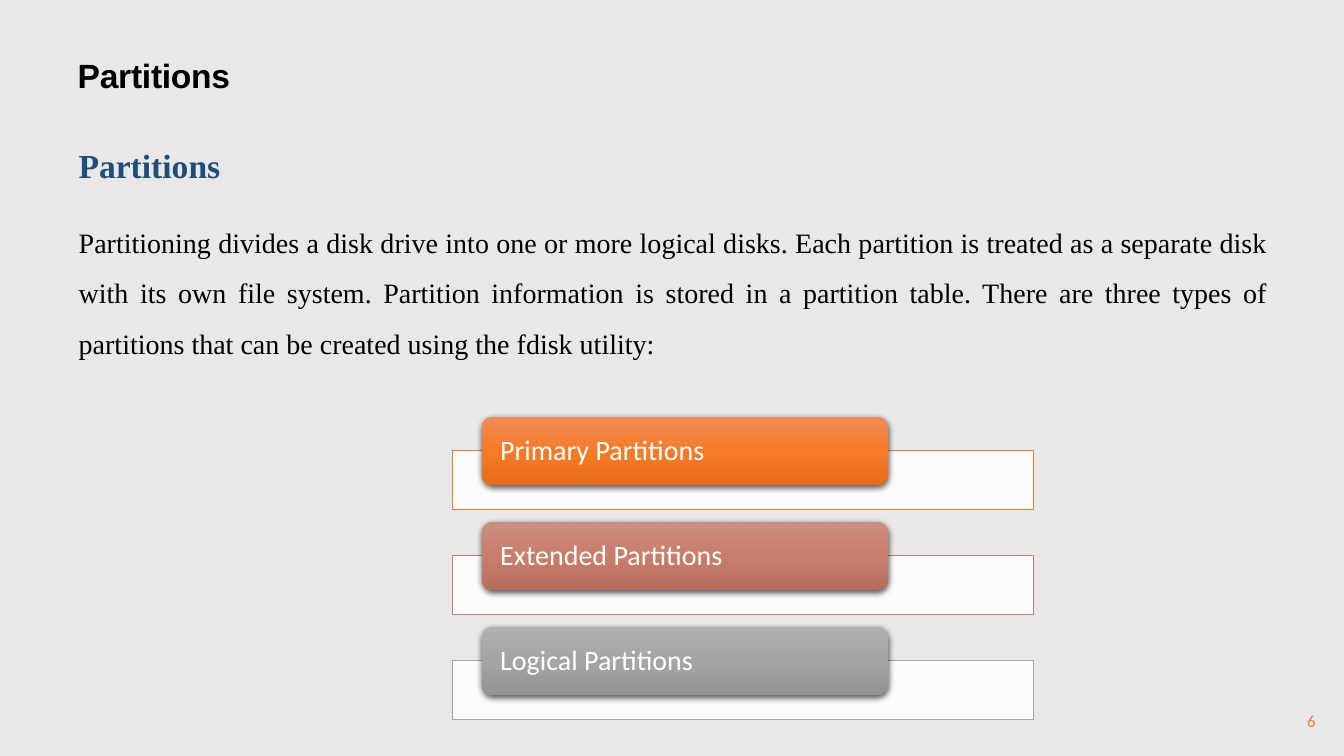
from copy import deepcopy

from lxml.etree import SubElement
from pptx import Presentation
from pptx.dml.color import RGBColor
from pptx.enum.shapes import MSO_SHAPE
from pptx.enum.text import MSO_ANCHOR, MSO_AUTO_SIZE, PP_ALIGN
from pptx.oxml.ns import qn
from pptx.util import Pt


def color(hex_string):
    return RGBColor.from_string(hex_string)


class SlideBuilder:
    heading_font = "Arial"
    text_font = "Times New Roman"
    label_font = "Calibri"
    black = "000000"
    white = "FFFFFF"
    navy = "1F4E79"
    orange = "ED7D31"
    background = "E9E7E7"

    def __init__(self, presentation):
        self.slide = presentation.slides.add_slide(presentation.slide_layouts[1])
        self.slide.background.fill.solid()
        self.slide.background.fill.fore_color.rgb = color(self.background)

    def place(self, shape, left, top, width, height):
        shape.left, shape.top = Pt(left), Pt(top)
        shape.width, shape.height = Pt(width), Pt(height)

    def set_text(self, shape, text, size, font, hex_string, bold=False,
                 align=PP_ALIGN.LEFT, anchor=MSO_ANCHOR.TOP, line_spacing=1.0):
        frame = shape.text_frame
        frame.word_wrap = True
        frame.auto_size = MSO_AUTO_SIZE.NONE
        frame.vertical_anchor = anchor
        paragraph = frame.paragraphs[0]
        paragraph.alignment = align
        paragraph.line_spacing = line_spacing
        paragraph.space_before = Pt(0)
        run = paragraph.add_run()
        run.text = text
        run.font.size = Pt(size)
        run.font.name = font
        run.font.bold = bold
        run.font.color.rgb = color(hex_string)
        return paragraph

    def title(self, text, box):
        shape = self.slide.shapes.title
        self.place(shape, *box)
        paragraph = self.set_text(shape, text, 24, self.heading_font, self.black, bold=True)
        paragraph.runs[0].font._element.set("spc", "-20")

    def body(self, text, box):
        shape = self.slide.placeholders[1]
        self.place(shape, *box)
        paragraph = self.set_text(shape, text, 20, self.text_font, self.black,
                                  align=PP_ALIGN.JUSTIFY, line_spacing=1.5)
        properties = paragraph._p.get_or_add_pPr()
        properties.set("marL", "0")
        properties.set("indent", "0")
        SubElement(properties, qn("a:buNone"))

    def text_box(self, text, box, size, font, hex_string, **style):
        shape = self.slide.shapes.add_textbox(*map(Pt, box))
        self.set_text(shape, text, size, font, hex_string, **style)

    def panel(self, box, line_color):
        shape = self.slide.shapes.add_shape(MSO_SHAPE.RECTANGLE, *map(Pt, box))
        shape.shadow.inherit = False
        shape.fill.solid()
        shape.fill.fore_color.rgb = color(self.white)
        fill_color = shape._element.spPr.find(qn("a:solidFill"))[0]
        SubElement(fill_color, qn("a:alpha"), val="90000")
        shape.line.color.rgb = color(line_color)
        shape.line.width = Pt(0.5)

    def tab(self, text, box, gradient):
        shape = self.slide.shapes.add_shape(MSO_SHAPE.ROUNDED_RECTANGLE, *map(Pt, box))
        shape.line.fill.background()
        self.fill_gradient(shape, gradient)
        self.drop_shadow(shape)
        frame = shape.text_frame
        frame.margin_left = frame.margin_right = Pt(10.8)
        frame.margin_top = frame.margin_bottom = Pt(0)
        self.set_text(shape, text, 20, self.label_font, self.white,
                      anchor=MSO_ANCHOR.MIDDLE, line_spacing=0.9)

    def fill_gradient(self, shape, gradient):
        shape.fill.gradient()
        shape.fill.gradient_angle = 270
        stops = next(shape._element.spPr.iter(qn("a:gsLst")))
        stops.append(deepcopy(stops[-1]))
        for index, (stop, hex_string) in enumerate(zip(shape.fill.gradient_stops, gradient)):
            stop.position = index / 2
            stop.color.rgb = color(hex_string)

    def drop_shadow(self, shape):
        shape.shadow.inherit = False
        effects = shape._element.spPr.find(qn("a:effectLst"))
        shadow = SubElement(effects, qn("a:outerShdw"), blurRad=str(Pt(4.5)),
                            dist=str(Pt(1.5)), dir="5400000", algn="ctr", rotWithShape="0")
        shadow_color = SubElement(shadow, qn("a:srgbClr"), val=self.black)
        SubElement(shadow_color, qn("a:alpha"), val="63000")


def main():
    presentation = Presentation()
    presentation.slide_width, presentation.slide_height = Pt(960), Pt(540)
    builder = SlideBuilder(presentation)

    builder.title("Partitions", (48.3, 35.3, 289.5, 36))
    builder.text_box("Partitions", (49, 100, 274.3, 36), 24,
                     builder.text_font, builder.navy, bold=True)
    builder.body(
        "Partitioning divides a disk drive into one or more logical disks. "
        "Each partition is treated as a separate disk with its own file system. "
        "Partition information is stored in a partition table. There are three types "
        "of partitions that can be created using the fdisk utility:",
        (49, 145.4, 864, 165))

    partition_types = [
        ("Primary Partitions", builder.orange, ("F18C57", "F67B28", "E56C19")),
        ("Extended Partitions", "C48170", ("CB8F81", "C97E6B", "B76D5B")),
        ("Logical Partitions", "A5A5A5", ("AFAFAF", "A5A5A5", "939393")),
    ]
    row_pitch = 75
    for row, (label, line_color, gradient) in enumerate(partition_types):
        offset = row * row_pitch
        builder.panel((323.3, 321.8 + offset, 414.7, 42), line_color)
        builder.tab(label, (344.1, 297.6 + offset, 290.2, 49), gradient)

    builder.text_box("6", (913, 500.4, 33.8, 28.8), 12, builder.label_font, builder.orange,
                     align=PP_ALIGN.RIGHT, anchor=MSO_ANCHOR.MIDDLE)
    presentation.save("out.pptx")


if __name__ == "__main__":
    main()
